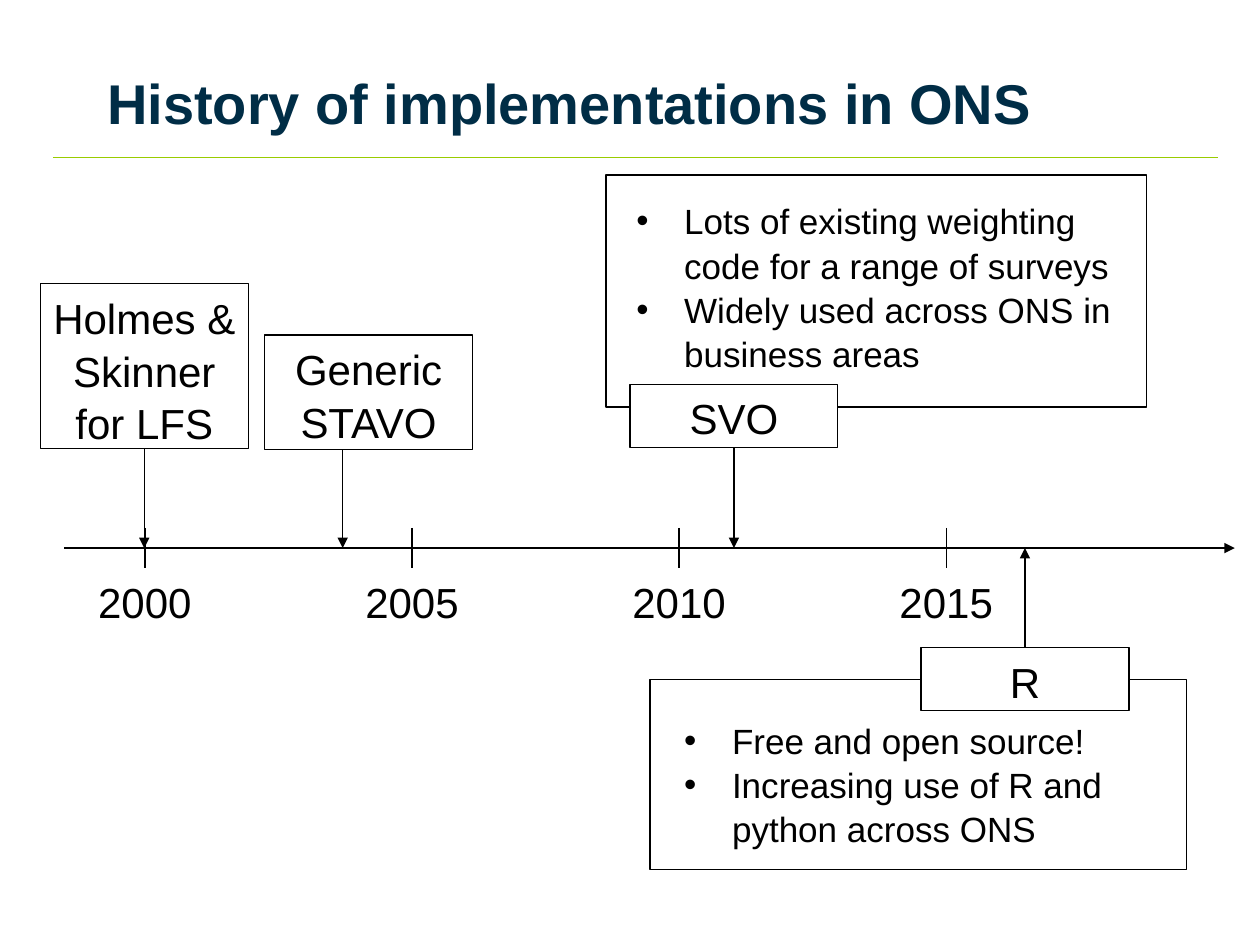
"""Build a timeline slide on the history of implementations."""
from pptx import Presentation
from pptx import util as u
from pptx.dml import color as c
from pptx.enum import shapes as s, text as t
from pptx.oxml import ns, xmlchemy as x

hues = {"ink": "000000", "navy": "002D46", "lime": "99CC00", "white": "FFFFFF"}
rgb = {name: c.RGBColor.from_string(code) for name, code in hues.items()}


def write(par, words, size, hue="ink", bold=False):
    par.line_spacing = 1.05
    run = par.add_run()
    run.text = words
    font = run.font
    font.name, font.size, font.bold = "Arial", u.Pt(size), bold
    font.color.rgb = rgb[hue]


def rule(x1, y1, x2, y2, hue="ink", arrow=False):
    line = slide.shapes.add_connector(
        s.MSO_CONNECTOR.STRAIGHT, *map(u.Inches, (x1, y1, x2, y2)))
    line.line.color.rgb = rgb[hue]
    line.line.width = u.Pt(0.75)
    if arrow:
        tail = x.OxmlElement("a:tailEnd")
        tail.set("type", "triangle")
        line.line._get_or_add_ln().append(tail)
    line._element.spPr.append(x.OxmlElement("a:effectLst"))
    return line


deck = Presentation()
deck.slide_width, deck.slide_height = u.Inches(10), u.Inches(7.5)
slide = deck.slides.add_slide(deck.slide_layouts[3])
title, *lists = slide.placeholders

title.left, title.top, title.width, title.height = map(
    u.Inches, (0.75, 0.17, 8.5, 1.25))
title.text_frame.vertical_anchor = t.MSO_ANCHOR.MIDDLE
head = title.text_frame.paragraphs[0]
head.alignment = t.PP_ALIGN.LEFT
write(head, "History of implementations in ONS", 32, "navy", True)
rule(0.42, 1.25, 9.67, 1.25, "lime")

points = [
    ((4.43, 1.52, 4.67, 1.78),
     ["Lots of existing weighting code for a range of surveys",
      "Widely used across ONS in business areas"]),
    ((4.81, 5.64, 4.76, 1.11),
     ["Free and open source!",
      "Increasing use of R and python across ONS"]),
]
for body, (place, items) in zip(lists, points):
    body.left, body.top, body.width, body.height = map(u.Inches, place)
    frame = body.text_frame
    frame.auto_size = t.MSO_AUTO_SIZE.NONE
    for i, words in enumerate(items):
        par = frame.add_paragraph() if i else frame.paragraphs[0]
        par.level = 1
        par.space_before = u.Pt(0)
        write(par, words, 20)
        props = par._p.get_or_add_pPr()
        props.set("marL", str(u.Inches(0.9)))
        props.set("indent", str(u.Inches(-0.38)))
        mark = x.OxmlElement("a:buFont")
        mark.set("typeface", "Arial")
        dot = x.OxmlElement("a:buChar")
        dot.set("char", "•")
        props.extend([mark, dot])

axis = 4.35
rule(0.51, axis, 9.8, axis, arrow=True)
for i in range(4):
    mid = 1.15 + 2.12 * i
    rule(mid, axis - 0.16, mid, axis + 0.16)
    year = slide.shapes.add_textbox(
        *map(u.Inches, (mid - 0.48, 4.51, 0.96, 0.5)))
    year.text_frame.word_wrap = True
    par = year.text_frame.paragraphs[0]
    par.alignment = t.PP_ALIGN.CENTER
    write(par, str(2000 + 5 * i), 24)

boxes = [
    ((4.81, 1.39, 4.29, 1.84), "", None, None),
    ((5.16, 5.39, 4.26, 1.51), "", None, None),
    ((0.32, 2.25, 1.65, 1.31), "Holmes & Skinner for LFS", 1.15, 2),
    ((2.1, 2.66, 1.65, 0.91), "Generic STAVO", 2.72, None),
    ((5, 3.05, 1.65, 0.5), "SVO", 5.83, 2),
    ((7.31, 5.14, 1.65, 0.5), "R", 8.13, 0),
]
for place, words, mid, side in boxes:
    box = slide.shapes.add_shape(s.MSO_SHAPE.RECTANGLE, *map(u.Inches, place))
    box.shadow.inherit = False
    box.line.color.rgb = rgb["ink"]
    box.line.width = u.Pt(0.75)
    if not words:
        box.fill.background()
        continue
    box.fill.solid()
    box.fill.fore_color.rgb = rgb["white"]
    box.text_frame.word_wrap = True
    box.text_frame.vertical_anchor = t.MSO_ANCHOR.TOP
    par = box.text_frame.paragraphs[0]
    par.alignment = t.PP_ALIGN.CENTER
    write(par, words, 24)
    edge = place[1] if side == 0 else place[1] + place[3]
    line = rule(mid, edge, mid, axis, arrow=True)
    if side is not None:
        line.begin_connect(box, side)
        line.end_x = line.begin_x

deck.save("out.pptx")
